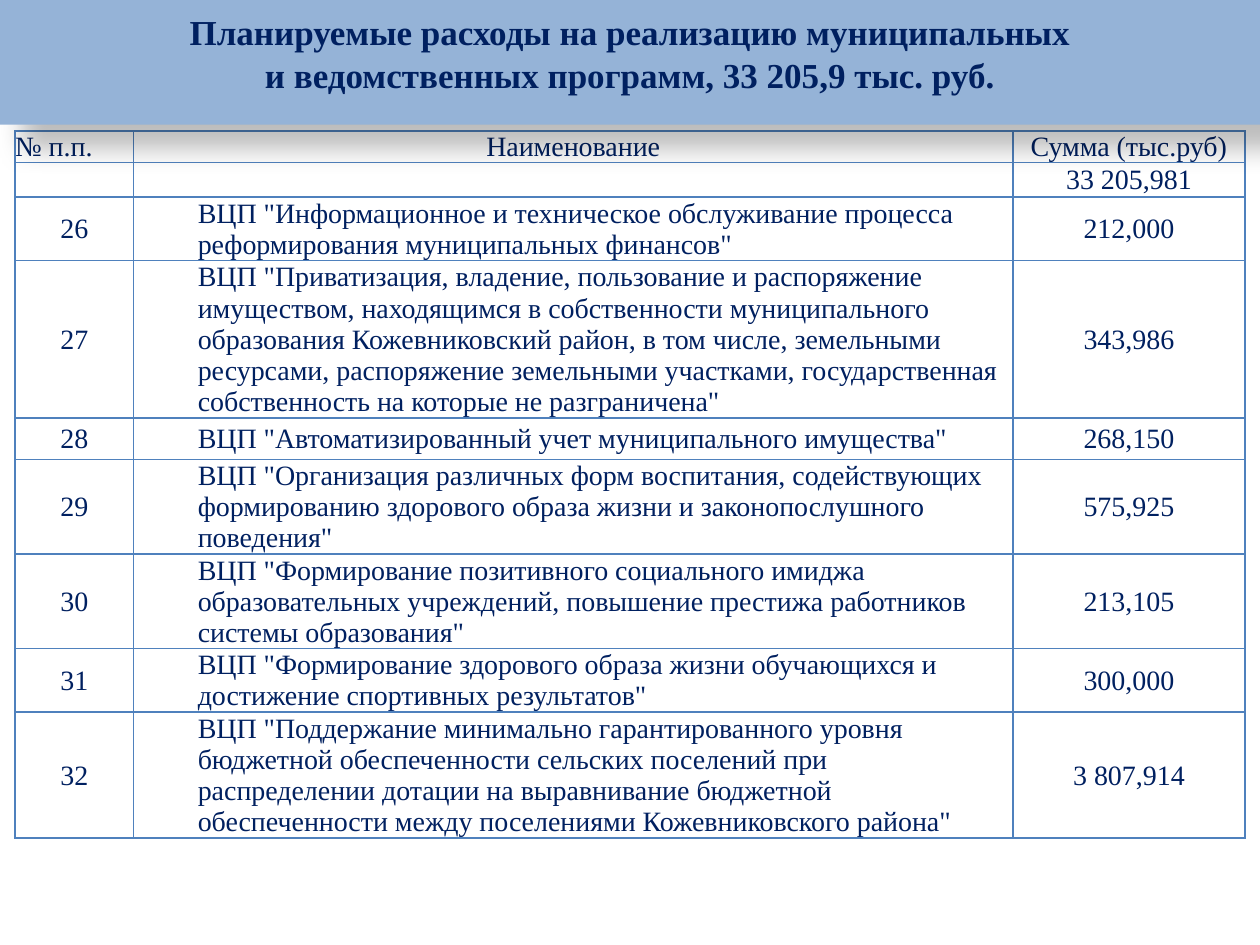
from lxml.etree import SubElement
from pptx import Presentation
from pptx.dml.color import RGBColor
from pptx.enum.shapes import MSO_SHAPE
from pptx.enum.text import MSO_ANCHOR, PP_ALIGN
from pptx.oxml import parse_xml
from pptx.oxml.ns import nsdecls, qn
from pptx.util import Inches, Pt

NAVY = RGBColor(0x00, 0x20, 0x60)
BAND_BLUE = RGBColor(0x95, 0xB3, 0xD7)
BORDER_BLUE = RGBColor(0x4F, 0x81, 0xBD)
BLACK = RGBColor(0, 0, 0)
FONT = "Times New Roman"

COLUMN_WIDTHS = [0.94, 6.98, 1.84]
ROWS = [
    (0.25, "№ п.п.", "Наименование", "Сумма (тыс.руб)"),
    (0.25, "", "", "33 205,981"),
    (0.5, "26", 'ВЦП "Информационное и техническое обслуживание процесса '
     'реформирования муниципальных финансов"', "212,000"),
    (1.25, "27", 'ВЦП "Приватизация, владение, пользование и распоряжение '
     'имуществом, находящимся в собственности муниципального образования '
     'Кожевниковский район, в том числе, земельными ресурсами, распоряжение '
     'земельными участками, государственная собственность на которые не '
     'разграничена"', "343,986"),
    (0.33, "28", 'ВЦП "Автоматизированный учет муниципального имущества"', "268,150"),
    (0.75, "29", 'ВЦП "Организация различных форм воспитания, содействующих '
     'формированию здорового образа жизни и законопослушного поведения"', "575,925"),
    (0.75, "30", 'ВЦП "Формирование позитивного социального имиджа '
     'образовательных учреждений, повышение престижа работников системы '
     'образования"', "213,105"),
    (0.5, "31", 'ВЦП "Формирование здорового образа жизни обучающихся и '
     'достижение спортивных результатов"', "300,000"),
    (1.0, "32", 'ВЦП "Поддержание минимально гарантированного уровня бюджетной '
     'обеспеченности сельских поселений при распределении дотации на '
     'выравнивание бюджетной обеспеченности между поселениями '
     'Кожевниковского района"', "3 807,914"),
]
TITLE_LINES = [
    "Планируемые расходы на реализацию муниципальных",
    "и ведомственных программ, 33 205,9 тыс. руб.",
]


def write(para, text, size, bold=False, align=PP_ALIGN.CENTER):
    para.alignment = align
    if not text:
        SubElement(para._p, qn("a:endParaRPr"), sz=str(size * 100))
        return
    span = para.add_run()
    span.text = text
    span.font.name = FONT
    span.font.size = Pt(size)
    span.font.bold = bold
    span.font.color.rgb = NAVY


def add_borders(cell):
    properties = cell._tc.get_or_add_tcPr()
    for position, side in enumerate(("lnL", "lnR", "lnT", "lnB")):
        properties.insert(position, parse_xml(
            f'<a:{side} {nsdecls("a")} w="{Pt(1)}"><a:solidFill>'
            f'<a:srgbClr val="{BORDER_BLUE}"/></a:solidFill></a:{side}>'))


deck = Presentation()
deck.slide_width, deck.slide_height = Inches(10), Inches(7.5)
page = deck.slides.add_slide(deck.slide_layouts[6])

frame = page.shapes.add_table(
    len(ROWS), len(COLUMN_WIDTHS), Inches(0.12), Inches(1.04),
    Inches(sum(COLUMN_WIDTHS)), Inches(sum(row[0] for row in ROWS)))
table = frame.table
table.first_row = False
table.horz_banding = False
for column, width in zip(table.columns, COLUMN_WIDTHS):
    column.width = Inches(width)

for row_index, (height, *texts) in enumerate(ROWS):
    table.rows[row_index].height = Inches(height)
    is_program = row_index >= 2
    margin = Inches(0.01 if is_program else 0)
    for column_index, text in enumerate(texts):
        cell = table.cell(row_index, column_index)
        cell.fill.background()
        cell.vertical_anchor = MSO_ANCHOR.MIDDLE
        cell.margin_left = cell.margin_top = cell.margin_right = margin
        cell.margin_bottom = 0
        add_borders(cell)
        para = cell.text_frame.paragraphs[0]
        align = PP_ALIGN.CENTER
        if is_program and column_index == 1:
            align = PP_ALIGN.LEFT
            para.level = 1
            indent = para._p.get_or_add_pPr()
            indent.set("marL", str(Inches(0.5)))
            indent.set("indent", "0")
        elif row_index == column_index == 0:
            align = PP_ALIGN.LEFT
        write(para, text, 16, align=align)

band = page.shapes.add_shape(MSO_SHAPE.RECTANGLE, 0, 0, Inches(10), Inches(0.99))
band.fill.solid()
band.fill.fore_color.rgb = BAND_BLUE
band.line.fill.background()
band.shadow.inherit = False
effects = band._element.spPr.find(qn("a:effectLst"))
effects.append(parse_xml(
    f'<a:outerShdw {nsdecls("a")} blurRad="{Pt(15)}" dist="{Pt(18)}" '
    f'dir="{45 * 60000}" rotWithShape="0"><a:srgbClr val="{BLACK}">'
    '<a:alpha val="26000"/></a:srgbClr></a:outerShdw>'))
title = band.text_frame
title.word_wrap = True
title.vertical_anchor = MSO_ANCHOR.TOP
title.margin_top = Inches(0.08)
for index, line in enumerate(TITLE_LINES):
    para = title.add_paragraph() if index else title.paragraphs[0]
    if index:
        para.space_before = Pt(1)
    write(para, line, 20, bold=True)

deck.save("out.pptx")
